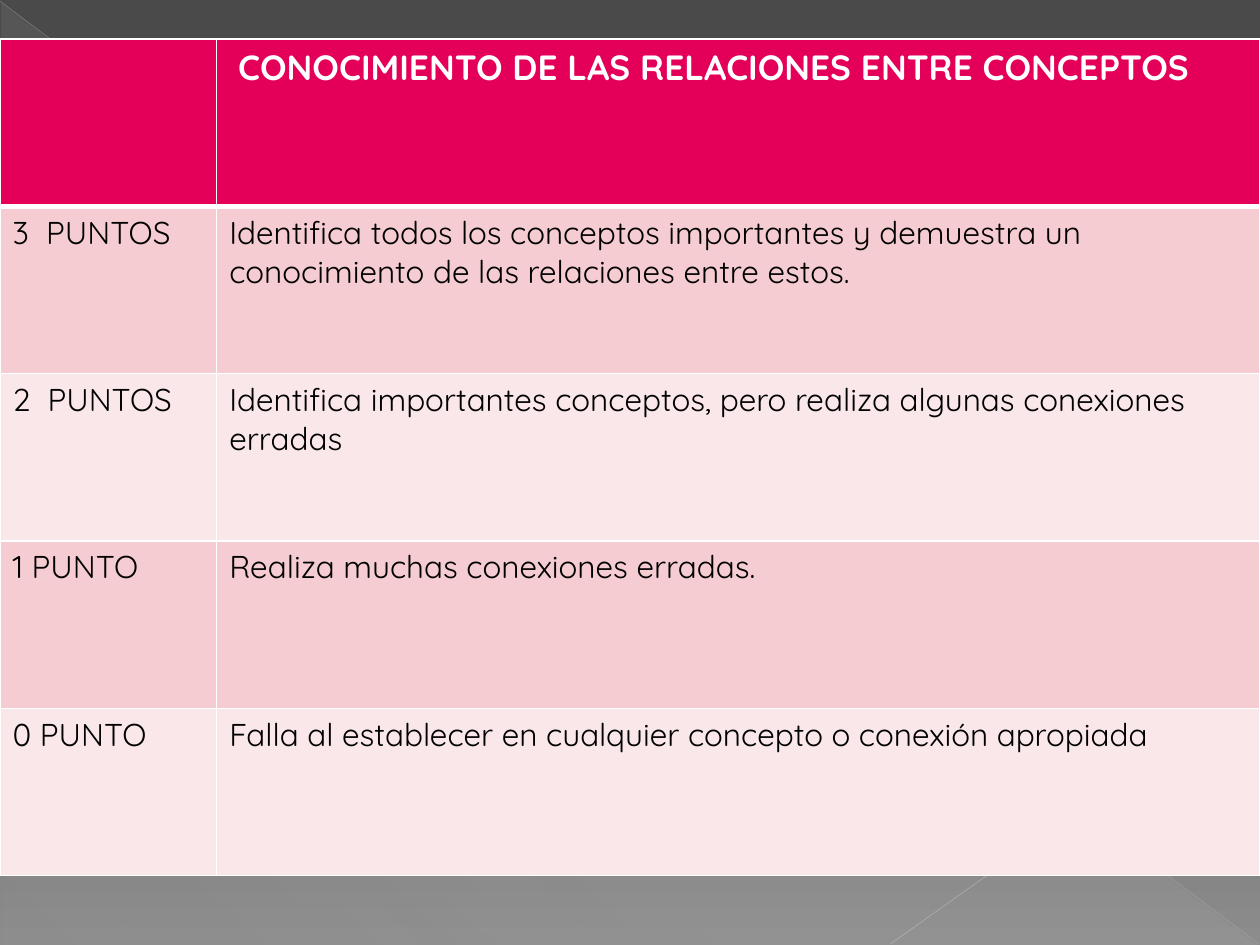
from lxml.etree import SubElement
from pptx import Presentation
from pptx.dml.color import RGBColor
from pptx.enum.shapes import MSO_CONNECTOR, MSO_SHAPE
from pptx.oxml import parse_xml
from pptx.oxml.ns import nsdecls, qn
from pptx.util import Inches, Pt

WIDTH, HEIGHT = 10, 7.5
FONT = "Quicksand"
BACKDROP = [(0, "4A4A4A", 100), (60, "626262", 100), (100, "8C8C8C", 100)]
SHEEN = [(0, "D2D2D2", 10), (70, "D2D2D2", 8), (100, "D2D2D2", 1)]
DIAGONALS = [
    ((0, 0.01), (9.99, 7.49), "BFBFBF", 0.39, 35),
    ((10, 5.41), (7.07, 7.49), "C6C6C6", 0.47, 45),
]
RUBRIC = [
    ("", "CONOCIMIENTO DE LAS RELACIONES ENTRE CONCEPTOS"),
    ("3  PUNTOS", "Identifica todos los conceptos importantes y demuestra un "
                  "conocimiento de las relaciones entre estos."),
    ("2  PUNTOS", "Identifica importantes conceptos, pero realiza algunas conexiones erradas"),
    ("1 PUNTO", "Realiza muchas conexiones erradas."),
    ("0 PUNTO", "Falla al establecer en cualquier concepto o conexión apropiada"),
]
HEADER_FILL, BAND_FILLS = "E40059", ["F5CCD1", "FAE7EA"]
TABLE_TOP, TABLE_HEIGHT = 0.31, 6.64
COLUMN_SHARES = [0.172, 0.828]


def color(value):
    return RGBColor.from_string(value)


def set_gradient(owner, stops, angle):
    marks = "".join(
        f'<a:gs pos="{place * 1000}"><a:srgbClr val="{tone}">'
        f'<a:alpha val="{opacity * 1000}"/></a:srgbClr></a:gs>'
        for place, tone, opacity in stops
    )
    gradient = parse_xml(
        f'<a:gradFill {nsdecls("a")} rotWithShape="1"><a:gsLst>{marks}</a:gsLst>'
        f'<a:lin ang="{angle * 60000}" scaled="0"/></a:gradFill>'
    )
    solid = next(owner.iter(qn("a:solidFill")))
    solid.getparent().replace(solid, gradient)


def add_diagonal(page, start, end, tone, weight, opacity):
    line = page.shapes.add_connector(
        MSO_CONNECTOR.STRAIGHT, *(Inches(value) for value in start + end)
    )
    line.line.color.rgb = color(tone)
    line.line.width = Pt(weight)
    tint = next(line.element.spPr.iter(qn("a:srgbClr")))
    SubElement(tint, qn("a:alpha"), val=str(opacity * 1000))
    SubElement(line.element.spPr, qn("a:effectLst"))


def set_borders(cell, weights):
    properties = cell._tc.get_or_add_tcPr()
    for position, (side, weight) in enumerate(weights.items()):
        properties.insert(position, parse_xml(
            f'<a:ln{side} {nsdecls("a")} w="{Pt(weight)}"><a:solidFill>'
            f'<a:srgbClr val="FFFFFF"/></a:solidFill></a:ln{side}>'
        ))


def add_span(para, text, tone, **formats):
    span = para.add_run()
    span.text = text
    span.font.color.rgb = color(tone)
    for name, value in {"name": FONT, **formats}.items():
        setattr(span.font, name, value)


def add_rubric(page):
    table = page.shapes.add_table(
        len(RUBRIC), len(COLUMN_SHARES), 0, Inches(TABLE_TOP),
        Inches(WIDTH), Inches(TABLE_HEIGHT),
    ).table
    for column, share in zip(table.columns, COLUMN_SHARES):
        column.width = Inches(WIDTH * share)
    for row_index, texts in enumerate(RUBRIC):
        header = row_index == 0
        fill = HEADER_FILL if header else BAND_FILLS[(row_index - 1) % 2]
        weights = {"L": 1, "R": 1, "T": 3 if row_index == 1 else 1, "B": 3 if header else 1}
        for column_index, text in enumerate(texts):
            cell = table.cell(row_index, column_index)
            cell.fill.solid()
            cell.fill.fore_color.rgb = color(fill)
            set_borders(cell, weights)
            para = cell.text_frame.paragraphs[0]
            if header and text:
                add_span(para, " ", "FFFFFF", size=Pt(18), bold=True)
                add_span(para, text, "FFFFFF", size=Pt(20), bold=True)
            elif text:
                add_span(para, text, "000000", size=Pt(18), bold=False)


def main():
    deck = Presentation()
    deck.slide_width, deck.slide_height = Inches(WIDTH), Inches(HEIGHT)
    page = deck.slides.add_slide(deck.slide_layouts[6])
    page.background.fill.solid()
    page.background.fill.fore_color.rgb = color("4A4A4A")
    set_gradient(page.element, BACKDROP, 90)

    triangle = page.shapes.add_shape(
        MSO_SHAPE.RIGHT_TRIANGLE, Inches(0.01), Inches(0.02), Inches(9.98), Inches(7.48)
    )
    triangle.shadow.inherit = False
    triangle.line.fill.background()
    triangle.fill.solid()
    triangle.fill.fore_color.rgb = color("D2D2D2")
    set_gradient(triangle.element.spPr, SHEEN, 133)

    for diagonal in DIAGONALS:
        add_diagonal(page, *diagonal)
    add_rubric(page)
    deck.save("out.pptx")


if __name__ == "__main__":
    main()
